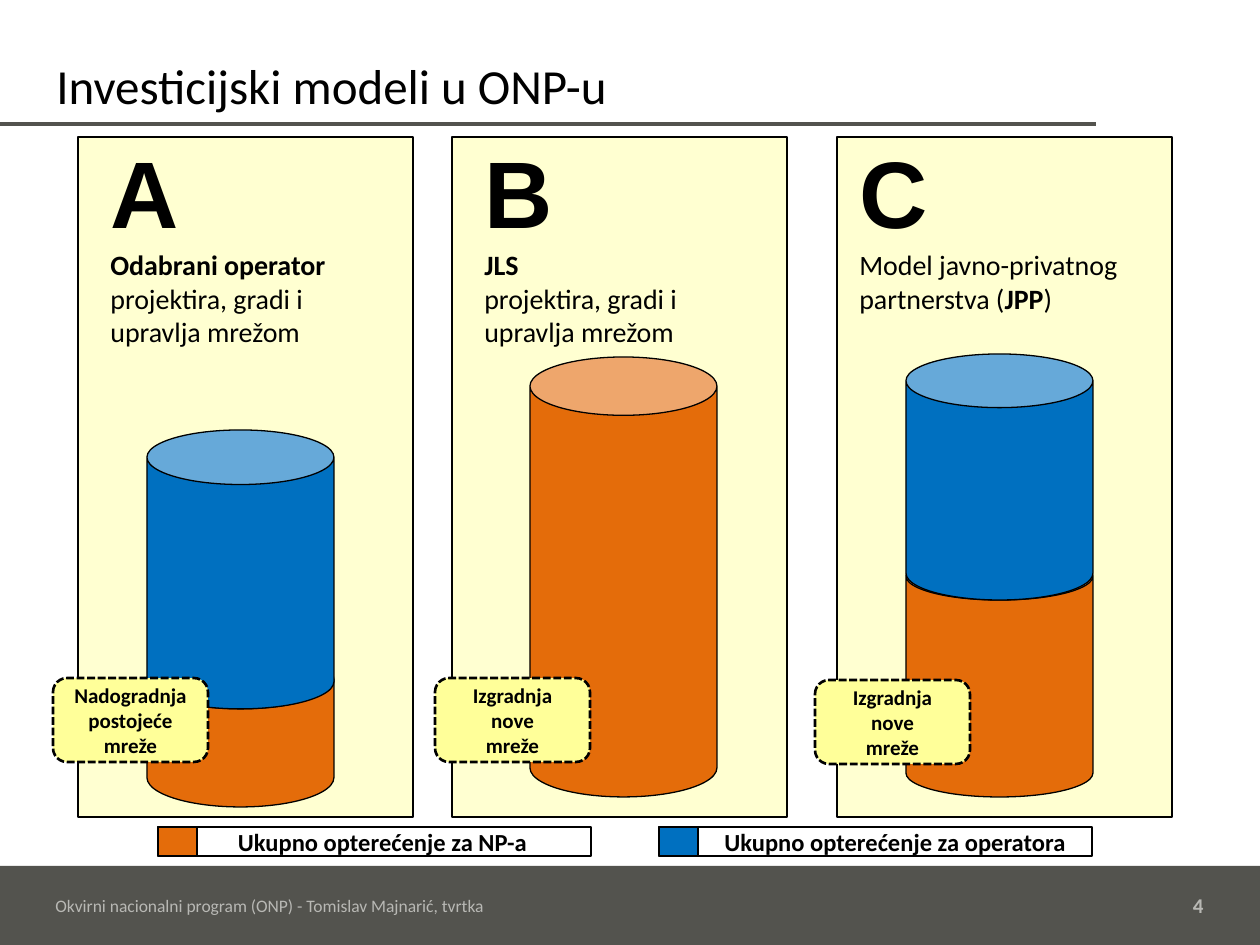
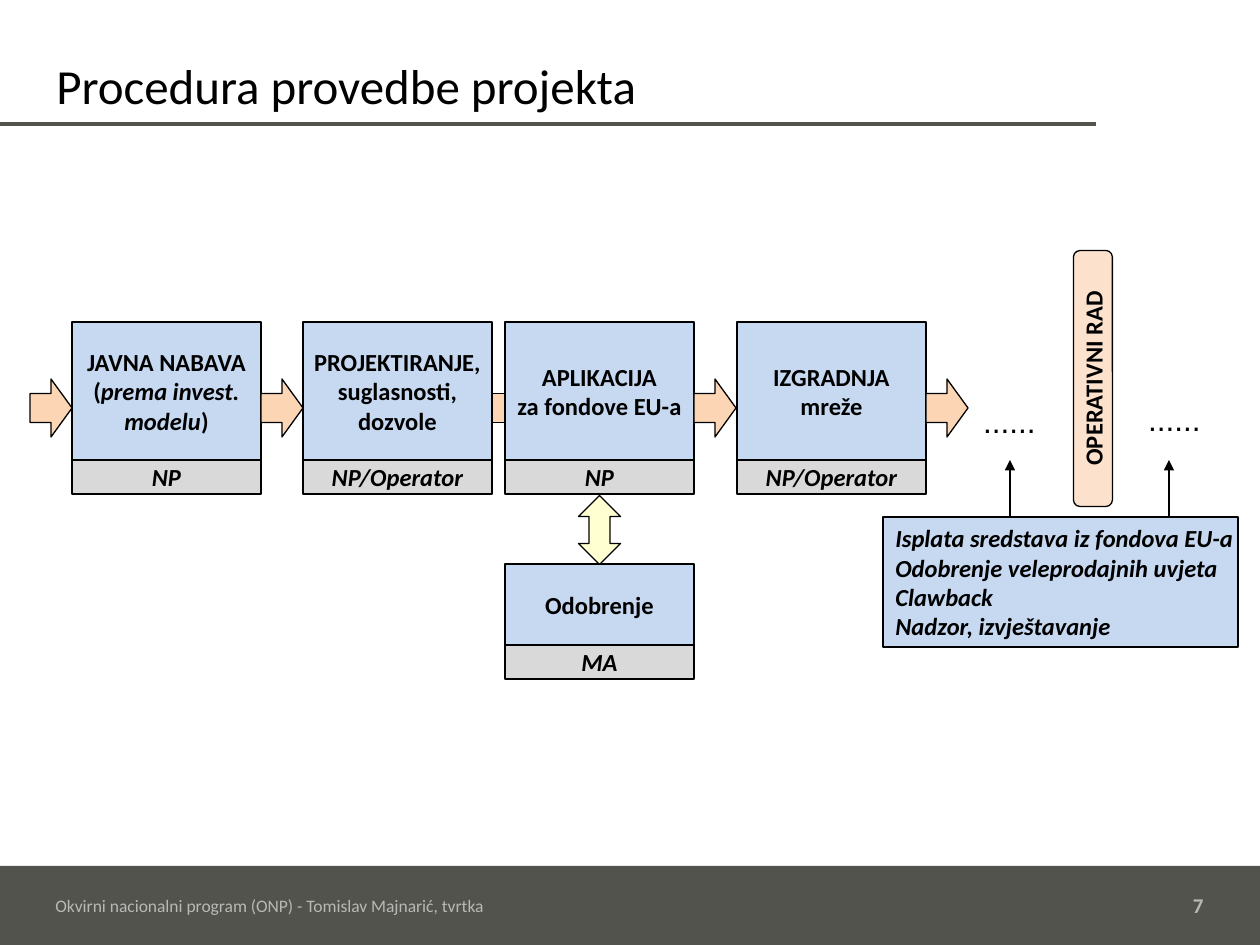
from dataclasses import dataclass, replace
from typing import NamedTuple, Optional

from lxml.etree import SubElement
from pptx import Presentation
from pptx.dml.color import RGBColor
from pptx.enum.dml import MSO_LINE_DASH_STYLE as Dash
from pptx.enum.shapes import MSO_CONNECTOR as Connector, MSO_SHAPE as Shape
from pptx.enum.text import MSO_ANCHOR as Anchor, PP_ALIGN as Align
from pptx.oxml.ns import qn
from pptx.util import Pt

PX = 914400 / 126
PAGE_WIDTH, PAGE_HEIGHT = 1260, 945
COLORS = {
    "ink": "000000", "slate": "53534E", "footer": "B8B8B4",
    "yellow": "FFFF99", "orange": "E46C0A", "blue": "0070C0",
    "sky": "C6D9F1", "gray": "D9D9D9", "peach": "FCD5B5", "apricot": "FAC090",
}
FOOTER = "Okvirni nacionalni program (ONP) - Tomislav Majnarić, tvrtka"


class Rect(NamedTuple):
    """Left, top, width and height in px."""
    x: int
    y: int
    width: int
    height: int


@dataclass(frozen=True)
class TextStyle:
    """Look of a text; pieces between bars switch the accent."""
    size: int
    bold: bool = False
    italic: bool = False
    accent: str = "bold"
    align: Align = Align.LEFT
    anchor: Anchor = Anchor.MIDDLE
    wrap: bool = True
    font: str = "Calibri"
    color: str = "ink"


@dataclass(frozen=True)
class Can:
    """One cylinder segment of an investment model."""
    y: int
    height: int
    color: str
    cap: float


@dataclass(frozen=True)
class Model:
    """One investment model column."""
    letter: str
    text: str
    panel_x: int
    text_x: int
    can_x: int
    cans: tuple[Can, ...]
    note: str
    note_x: int
    note_y: int = 678


@dataclass(frozen=True)
class Legend:
    """One legend entry with its swatch."""
    x: int
    color: str
    text: str
    indent: int


@dataclass(frozen=True)
class Step:
    """One task box with the party in charge below it."""
    rect: Rect
    task: str
    owner: str
    arrow_head: Optional[float] = None


TITLE = TextStyle(28, anchor=Anchor.BOTTOM)
FOOTNOTE = TextStyle(10, color="footer")
PAGE_NUMBER = TextStyle(12, bold=True, align=Align.RIGHT, color="footer")
LETTER = TextStyle(54, bold=True, anchor=Anchor.TOP, font="Arial")
MODEL_TEXT = TextStyle(16, anchor=Anchor.TOP)
LABEL = TextStyle(14, bold=True, accent="italic", align=Align.CENTER, wrap=False)
OWNER = replace(LABEL, italic=True)
DUTIES = replace(OWNER, align=Align.LEFT)
NOTE = replace(LABEL, size=12)
DOTS = TextStyle(18, align=Align.CENTER, anchor=Anchor.TOP, font="Arial")

MODELS = [
    Model("A", "|Odabrani operator|\nprojektira, gradi i upravlja mrežom", 78, 98, 147,
          (Can(650, 157, "orange", 0.375), Can(430, 279, "blue", 0.292)),
          "Nadogradnja\npostojeće\nmreže", 53),
    Model("B", "|JLS|\nprojektira, gradi i upravlja mrežom", 452, 472, 530,
          (Can(357, 440, "orange", 0.312),),
          "Izgradnja\nnove\nmreže", 435),
    Model("C", "Model javno-privatnog partnerstva (|JPP|)", 837, 847, 906,
          (Can(552, 245, "orange", 0.257), Can(354, 246, "blue", 0.287)),
          "Izgradnja\nnove\nmreže", 815, 680),
]
LEGENDS = [
    Legend(158, "orange", "Ukupno opterećenje za NP-a", 16),
    Legend(659, "blue", "Ukupno opterećenje za operatora", 39),
]
STEP_WIDTH, STEP_Y, STEP_HEIGHT, OWNER_HEIGHT = 189, 322, 138, 34
ARROW_Y, ARROW_WIDTH, ARROW_HEIGHT = 379, 42, 58
STEPS = [
    Step(Rect(x, STEP_Y, STEP_WIDTH, STEP_HEIGHT), task, owner, head)
    for x, task, owner, head in [
        (72, "JAVNA NABAVA\n(|prema invest.\n|modelu|)", "NP", 0.5),
        (303, "PROJEKTIRANJE,\nsuglasnosti,\ndozvole", "NP/Operator", 0),
        (505, "APLIKACIJA\nza fondove EU-a", "NP", 0.5),
        (737, "IZGRADNJA\nmreže", "NP/Operator", 0.5),
    ]
]
APPROVAL = Step(Rect(505, 564, STEP_WIDTH, 81), "Odobrenje", "MA")


def rgb(name: str) -> RGBColor:
    """Look up a named colour."""
    return RGBColor.from_string(COLORS[name])


def emu(*lengths: int) -> list[int]:
    """Turn px into EMU."""
    return [round(length * PX) for length in lengths]


def write(shape, text: str, style: TextStyle, lead: Optional[TextStyle] = None) -> None:
    """Fill a shape with text, optionally styling its first line apart."""
    frame = shape.text_frame
    frame.word_wrap = style.wrap
    frame.vertical_anchor = style.anchor
    frame.text = text
    for row, para in enumerate(frame.paragraphs):
        look = lead if lead and row == 0 else style
        pieces = para.text.split("|")
        para.clear()
        para.alignment = look.align
        for index, piece in enumerate(pieces):
            if not piece:
                continue
            accented = index % 2 == 1
            span = para.add_run()
            span.text = piece
            span.font.name = look.font
            span.font.size = Pt(look.size)
            span.font.bold = look.bold != (accented and look.accent == "bold")
            span.font.italic = look.italic != (accented and look.accent == "italic")
            span.font.color.rgb = rgb(look.color)


def add_text(page, rect: Rect, text: str, style: TextStyle,
             lead: Optional[TextStyle] = None) -> None:
    """Add a text box."""
    write(page.shapes.add_textbox(*emu(*rect)), text, style, lead)


def add_figure(page, kind: Shape, rect: Rect, fill: Optional[str] = None,
               opacity: int = 100, outlined: bool = True):
    """Add a preset shape with a thin black outline."""
    shape = page.shapes.add_shape(kind, *emu(*rect))
    shape.shadow.inherit = False
    if fill:
        shape.fill.solid()
        shape.fill.fore_color.rgb = rgb(fill)
    else:
        shape.fill.background()
    if opacity < 100:
        color = shape.element.spPr.find(".//" + qn("a:srgbClr"))
        SubElement(color, qn("a:alpha")).set("val", str(opacity * 1000))
    if outlined:
        shape.line.color.rgb = rgb("ink")
        shape.line.width = Pt(0.75)
    else:
        shape.line.fill.background()
    return shape


def add_line(page, start: tuple[int, int], end: tuple[int, int], color: str,
             width: float, arrow: bool = False) -> None:
    """Add a straight line, with an arrowhead at its end if asked."""
    line = page.shapes.add_connector(Connector.STRAIGHT, *emu(*start, *end))
    line.line.color.rgb = rgb(color)
    line.line.width = Pt(width)
    properties = line.element.spPr
    if arrow:
        SubElement(properties.find(qn("a:ln")), qn("a:tailEnd")).set("type", "triangle")
    SubElement(properties, qn("a:effectLst"))


def add_page(deck, title: str, number: int):
    """Add a blank page with the shared title, rule and footer."""
    page = deck.slides.add_slide(deck.slide_layouts[6])
    add_figure(page, Shape.RECTANGLE, Rect(0, 866, PAGE_WIDTH, 79), "slate", outlined=False)
    add_line(page, (0, 124), (1096, 124), "slate", 2.25)
    add_text(page, Rect(44, 31, 922, 90), title, TITLE)
    add_text(page, Rect(43, 881, 896, 49), FOOTER, FOOTNOTE)
    add_text(page, Rect(1116, 881, 100, 49), str(number), PAGE_NUMBER)
    return page


def add_model(page, model: Model) -> None:
    """Draw a model column with its cylinder and note."""
    add_figure(page, Shape.RECTANGLE, Rect(model.panel_x, 137, 335, 680), "yellow", 45)
    for can in model.cans:
        cylinder = add_figure(page, Shape.CAN, Rect(model.can_x, can.y, 187, can.height), can.color)
        cylinder.adjustments[0] = can.cap
    add_text(page, Rect(model.text_x, 128, 305, 229), f"{model.letter}\n{model.text}",
             MODEL_TEXT, LETTER)
    note = add_figure(page, Shape.ROUNDED_RECTANGLE,
                      Rect(model.note_x, model.note_y, 155, 84), "yellow")
    note.line.width = Pt(1.5)
    note.line.dash_style = Dash.SQUARE_DOT
    write(note, model.note, NOTE)


def add_legend(page, legend: Legend) -> None:
    """Draw a swatch and its framed label."""
    add_figure(page, Shape.RECTANGLE, Rect(legend.x, 827, 39, 29), legend.color)
    frame = add_figure(page, Shape.RECTANGLE, Rect(legend.x, 827, 433, 29))
    write(frame, legend.text, replace(LABEL, wrap=True))
    frame.text_frame.margin_left = emu(legend.indent)[0]
    frame.text_frame.margin_right = 0
    frame.text_frame.margin_top = frame.text_frame.margin_bottom = 0


def add_arrow(page, x: int, head: float = 0.5) -> None:
    """Draw a block arrow of the process row."""
    arrow = add_figure(page, Shape.RIGHT_ARROW, Rect(x, ARROW_Y, ARROW_WIDTH, ARROW_HEIGHT), "peach")
    arrow.adjustments[1] = head


def add_step(page, step: Step) -> None:
    """Draw a task, its owner and the arrow that follows."""
    x, y, width, height = step.rect
    process = Shape.FLOWCHART_PROCESS
    write(add_figure(page, process, step.rect, "sky"), step.task, LABEL)
    owner = add_figure(page, process, Rect(x, y + height, width, OWNER_HEIGHT), "gray")
    write(owner, step.owner, OWNER)
    if step.arrow_head is not None:
        add_arrow(page, x + width, step.arrow_head)


def build_models(deck) -> None:
    """Build the page of investment models."""
    page = add_page(deck, "Investicijski modeli u ONP-u", 4)
    for model in MODELS:
        add_model(page, model)
    for legend in LEGENDS:
        add_legend(page, legend)


def build_procedure(deck) -> None:
    """Build the page of the project procedure."""
    page = add_page(deck, "Procedura provedbe projekta", 7)
    add_arrow(page, STEPS[0].rect.x - ARROW_WIDTH)
    for step in [*STEPS, APPROVAL]:
        add_step(page, step)
    exchange = add_figure(page, Shape.LEFT_RIGHT_ARROW, Rect(565, 509, 69, 42), "yellow", 45)
    exchange.rotation = 270
    operation = add_figure(page, Shape.ROUNDED_RECTANGLE, Rect(965, 359, 256, 39), "apricot", 45)
    operation.rotation = 270
    write(operation, "OPERATIVNI RAD", LABEL)
    for x, y in [(1129, 394), (964, 396)]:
        add_text(page, Rect(x, y, 91, 50), "......", DOTS)
    duties = add_figure(page, Shape.FLOWCHART_PROCESS, Rect(883, 517, 355, 130), "sky")
    write(duties, "Isplata sredstava iz fondova EU-a\nOdobrenje veleprodajnih uvjeta\n"
                  "Clawback\nNadzor, izvještavanje", DUTIES)
    for x in (1010, 1169):
        add_line(page, (x, 517), (x, 460), "ink", 0.75, arrow=True)


def main() -> None:
    """Build and save the deck."""
    deck = Presentation()
    deck.slide_width, deck.slide_height = emu(PAGE_WIDTH, PAGE_HEIGHT)
    build_models(deck)
    build_procedure(deck)
    deck.save("out.pptx")


if __name__ == "__main__":
    main()
